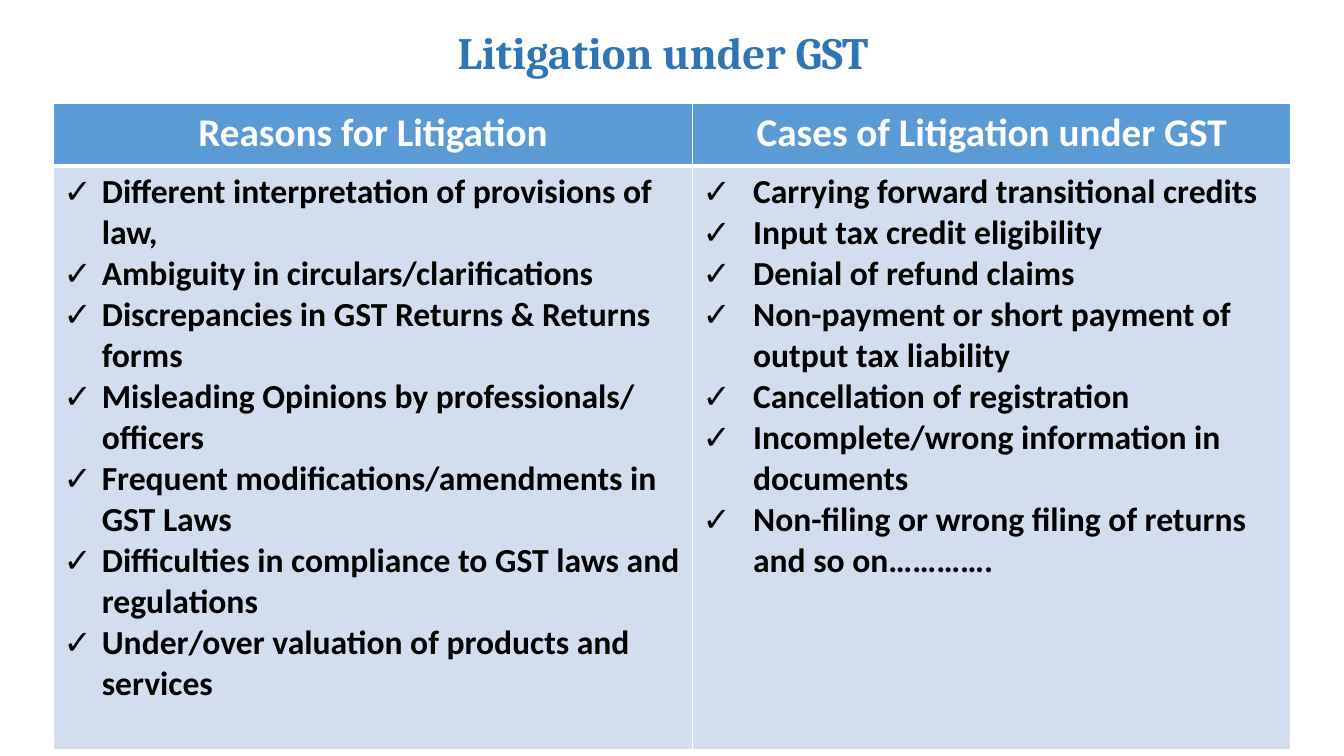
from dataclasses import dataclass

from lxml.etree import SubElement
from pptx import Presentation
from pptx.dml.color import RGBColor
from pptx.enum.text import MSO_ANCHOR, PP_ALIGN
from pptx.oxml import parse_xml
from pptx.oxml.ns import qn
from pptx.util import Inches, Pt

NS = "http://schemas.openxmlformats.org/drawingml/2006/main"
WIDE, HIGH = 13.33, 7.5


@dataclass(frozen=True)
class Theme:
    head: str = "Cambria"
    body: str = "Calibri"
    title: str = "2E75B6"
    band: str = "5B9BD5"
    pale: str = "D2DEEF"
    white: str = "FFFFFF"
    black: str = "000000"
    large: int = 32
    mid: int = 28
    small: int = 24


LOOK = Theme()

TITLE = "Litigation under GST"
HEADS = ["Reasons for Litigation", "Cases of Litigation under GST"]
LISTS = [
    [
        "Different interpretation of provisions of law,",
        "Ambiguity in circulars/clarifications",
        "Discrepancies in GST Returns & Returns forms",
        "Misleading Opinions by professionals/ officers",
        "Frequent modifications/amendments in GST Laws",
        "Difficulties in compliance to GST laws and regulations",
        "Under/over valuation of products and services",
    ],
    [
        "Carrying forward transitional credits",
        "Input tax credit eligibility",
        "Denial of refund claims",
        "Non-payment or short payment of output tax liability",
        "Cancellation of registration",
        "Incomplete/wrong information in documents",
        "Non-filing or wrong filing of returns and so on………….",
    ],
]
INDENTS = [0.38, 0.5]
COLS = [6.34, 5.93]
ROWS = [0.62, 5.79]


def add_run(para, text, font, size, color):
    run = para.add_run()
    run.text = text
    run.font.name = font
    run.font.size = Pt(size)
    run.font.bold = True
    run.font.color.rgb = RGBColor.from_string(color)


def add_title(slide):
    title = slide.shapes.title
    title.left, title.top = Inches(1.58), Inches(0.18)
    title.width, title.height = Inches(WIDE * 0.75), Inches(HIGH * 0.088)
    title.text_frame.vertical_anchor = MSO_ANCHOR.BOTTOM
    para = title.text_frame.paragraphs[0]
    para.alignment = PP_ALIGN.CENTER
    para.line_spacing = 0.9
    add_run(para, TITLE, LOOK.head, LOOK.large, LOOK.title)


def add_tick(para, indent):
    props = para._p.get_or_add_pPr()
    props.set("marL", str(Inches(indent)))
    props.set("indent", str(-Inches(indent)))
    SubElement(props, qn("a:buFont")).set("typeface", LOOK.body)
    SubElement(props, qn("a:buChar")).set("char", "✓")


def style_cell(cell, fill, base):
    cell.fill.solid()
    cell.fill.fore_color.rgb = RGBColor.from_string(fill)
    # Borders come before the fill in the cell properties
    props = cell._tc.get_or_add_tcPr()
    edges = {"L": 1, "R": 1, "T": 1 if fill == LOOK.band else 3, "B": base}
    for spot, (side, width) in enumerate(edges.items()):
        line = parse_xml(
            f'<a:ln{side} xmlns:a="{NS}" w="{Pt(width)}"><a:solidFill>'
            f'<a:srgbClr val="{LOOK.white}"/></a:solidFill></a:ln{side}>'
        )
        props.insert(spot, line)


def fill_head(cell, text):
    style_cell(cell, LOOK.band, 3)
    para = cell.text_frame.paragraphs[0]
    para.alignment = PP_ALIGN.CENTER
    add_run(para, text, LOOK.body, LOOK.mid, LOOK.white)


def fill_list(cell, items, indent):
    style_cell(cell, LOOK.pale, 1)
    frame = cell.text_frame
    for spot, item in enumerate(items):
        para = frame.add_paragraph() if spot else frame.paragraphs[0]
        add_tick(para, indent)
        add_run(para, item, LOOK.body, LOOK.small, LOOK.black)


def add_grid(slide):
    frame = slide.shapes.add_table(
        len(ROWS), len(COLS), Inches(0.53), Inches(1.03),
        Inches(sum(COLS)), Inches(sum(ROWS)),
    )
    table = frame.table
    for row, size in zip(table.rows, ROWS):
        row.height = Inches(size)
    for col, size in enumerate(COLS):
        table.columns[col].width = Inches(size)
        fill_head(table.cell(0, col), HEADS[col])
        fill_list(table.cell(1, col), LISTS[col], INDENTS[col])


def main():
    deck = Presentation()
    deck.slide_width, deck.slide_height = Inches(WIDE), Inches(HIGH)
    slide = deck.slides.add_slide(deck.slide_layouts[0])

    # The subtitle is not needed
    sub = slide.placeholders[1].element
    sub.getparent().remove(sub)

    add_title(slide)
    add_grid(slide)
    deck.save("out.pptx")


if __name__ == "__main__":
    main()
